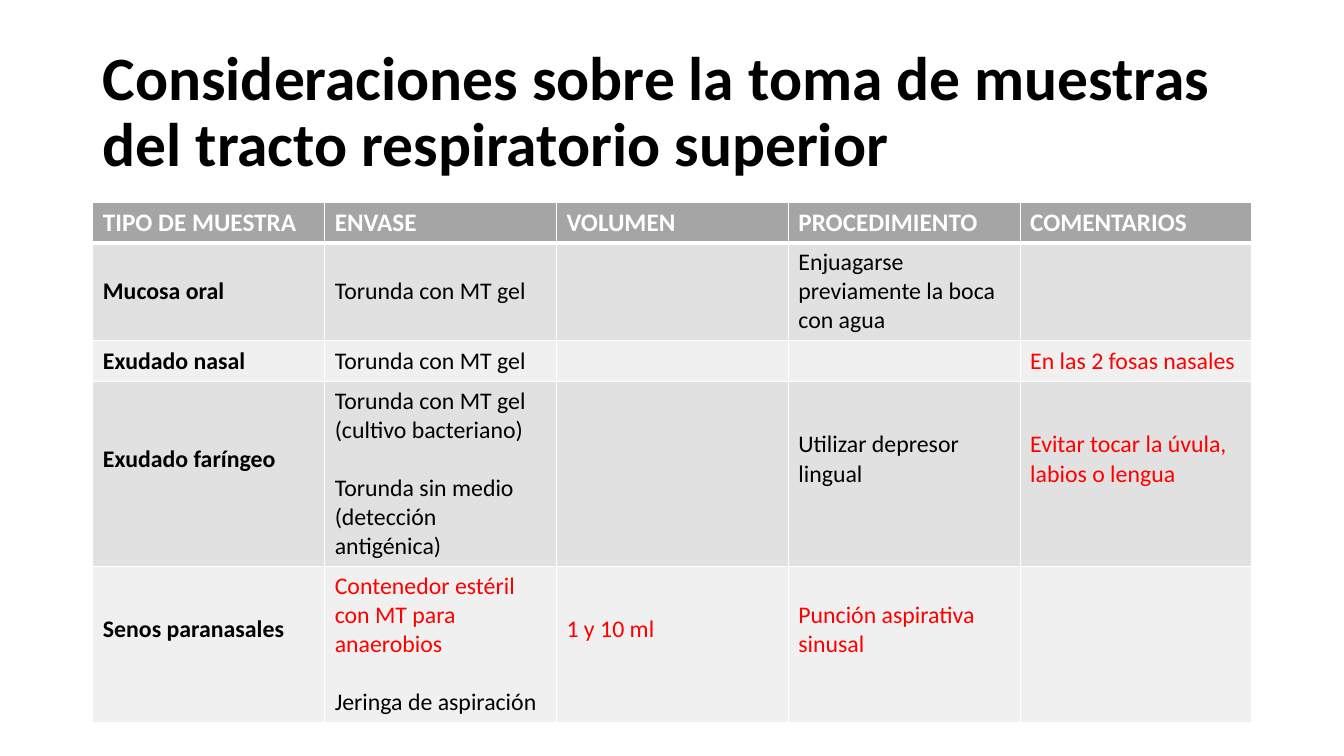
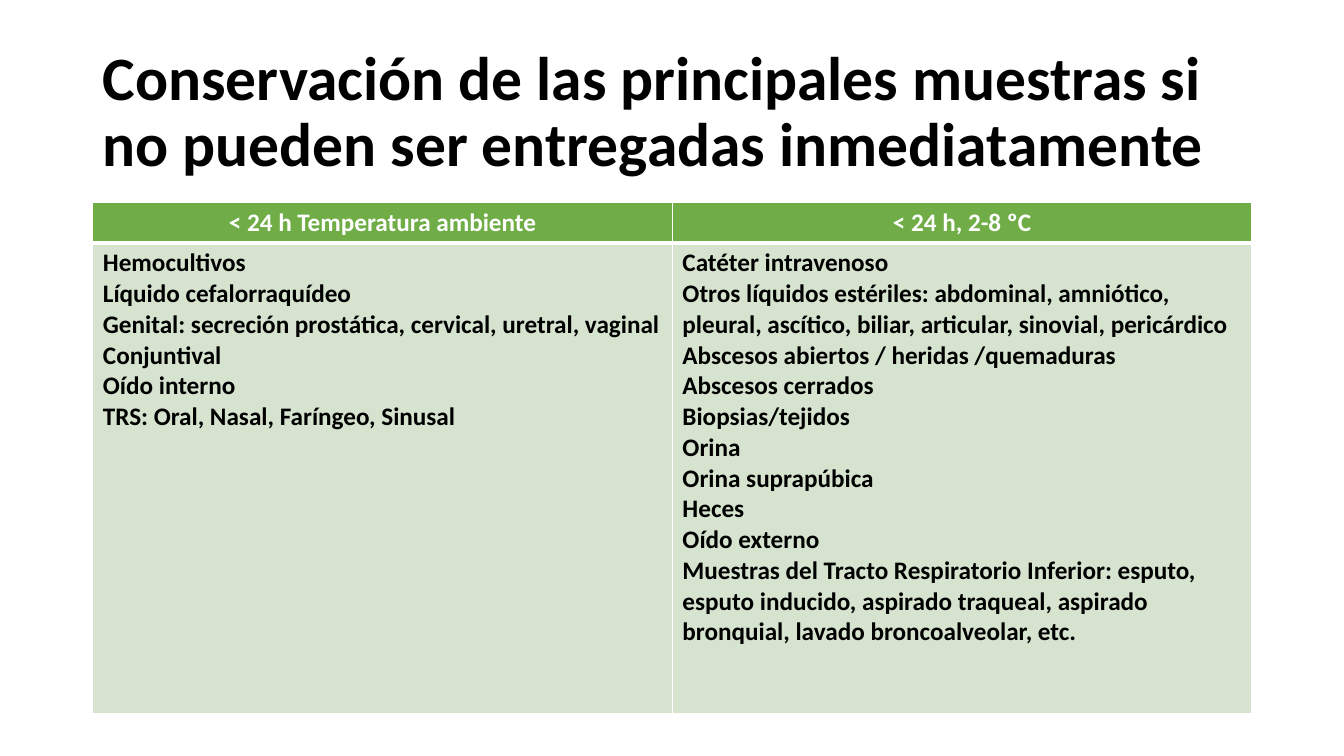
from typing import NamedTuple

from lxml.etree import SubElement
from pptx import Presentation
from pptx.dml.color import RGBColor
from pptx.enum.text import MSO_ANCHOR as Anchor, PP_ALIGN as Align
from pptx.oxml.ns import qn
from pptx.util import Cm, Pt

COLORS = {
    "white": "FFFFFF", "black": "000000", "red": "FF0000",
    "gray": "A5A5A5", "gray_dark_band": "E1E1E1", "gray_light_band": "F0F0F0",
    "green": "70AD47", "green_band": "D5E3CF",
}
FONT = "Calibri"
LEFT, WIDTH = Cm(2.34), Cm(29.21)
TITLE_TOP, TITLE_HEIGHT = Cm(1.02), Cm(3.68)
TABLE_TOP, HEADER_HEIGHT = Cm(5.09), 1.03
BLANK_LINE = 1.22  # line height relative to the font size


class Line(NamedTuple):
    text: str
    color: str = "black"
    bold: bool = False


def red(text):
    return Line(text, "red")


def bold(text):
    return Line(text, bold=True)


SAMPLE_HEADS = ["TIPO DE MUESTRA", "ENVASE", "VOLUMEN", "PROCEDIMIENTO", "COMENTARIOS"]
SAMPLE_ROWS = [
    [[bold("Mucosa oral")], [Line("Torunda con MT gel")], [],
     [Line("Enjuagarse previamente la boca con agua")], []],
    [[bold("Exudado nasal")], [Line("Torunda con MT gel")], [], [],
     [red("En las 2 fosas nasales")]],
    [[bold("Exudado faríngeo")],
     [Line("Torunda con MT gel (cultivo bacteriano)"),
      Line("Torunda sin medio (detección antigénica)")],
     [], [Line("Utilizar depresor lingual")],
     [red("Evitar tocar la úvula, labios o lengua")]],
    [[bold("Senos paranasales")],
     [red("Contenedor estéril con MT para anaerobios"), Line("Jeringa de aspiración")],
     [red("1 y 10 ml")], [red("Punción aspirativa sinusal")], []],
]
SAMPLE_HEIGHTS = [2.46, 1.03, 4.66, 3.93]

STORAGE_HEADS = ["< 24 h Temperatura ambiente", "< 24 h, 2-8 ºC"]
ROOM_TEMPERATURE = [
    "Hemocultivos",
    "Líquido cefalorraquídeo",
    "Genital: secreción prostática, cervical, uretral, vaginal",
    "Conjuntival",
    "Oído interno",
    "TRS: Oral, Nasal, Faríngeo, Sinusal",
]
REFRIGERATED = [
    "Catéter intravenoso",
    "Otros líquidos estériles: abdominal, amniótico, pleural, ascítico, biliar, "
    "articular, sinovial, pericárdico",
    "Abscesos abiertos / heridas /quemaduras",
    "Abscesos cerrados",
    "Biopsias/tejidos",
    "Orina",
    "Orina suprapúbica",
    "Heces",
    "Oído externo",
    "Muestras del Tracto Respiratorio Inferior: esputo, esputo inducido, aspirado "
    "traqueal, aspirado bronquial, lavado broncoalveolar, etc.",
]
STORAGE_HEIGHT = 11.86


def rgb(name):
    return RGBColor.from_string(COLORS[name])


def add_run(p, line, size):
    r = p.add_run()
    r.text = line.text
    r.font.name, r.font.size, r.font.bold = FONT, Pt(size), line.bold
    r.font.color.rgb = rgb(line.color)


def add_title(s, text):
    tf = s.shapes.add_textbox(LEFT, TITLE_TOP, WIDTH, TITLE_HEIGHT).text_frame
    tf.word_wrap = True
    tf.vertical_anchor = Anchor.MIDDLE
    p = tf.paragraphs[0]
    p.line_spacing = 0.9
    add_run(p, bold(text), 44)


def set_borders(cell, top, bottom):
    """Draw white borders; side lines are 1 pt wide."""
    tc_pr = cell._tc.get_or_add_tcPr()
    for side, width in (("L", 1), ("R", 1), ("T", top), ("B", bottom)):
        ln = SubElement(tc_pr, qn(f"a:ln{side}"), w=str(Pt(width)))
        fill = SubElement(ln, qn("a:solidFill"))
        SubElement(fill, qn("a:srgbClr"), val=COLORS["white"])


def fill_cell(cell, lines, size, fill, align=Align.LEFT, gap=0):
    cell.fill.solid()
    cell.fill.fore_color.rgb = rgb(fill)
    tf = cell.text_frame
    for i, line in enumerate(lines):
        p = tf.add_paragraph() if i else tf.paragraphs[0]
        p.alignment = align
        if i and gap:
            p.space_before = Pt(gap)
        add_run(p, line, size)


def add_table(s, heads, head_fill, heights, head_align=Align.LEFT):
    """Add a table with its header row and borders; heights are in cm."""
    heights = [HEADER_HEIGHT, *heights]
    table = s.shapes.add_table(len(heights), len(heads), LEFT, TABLE_TOP,
                               WIDTH, Cm(sum(heights))).table
    for row, height in zip(table.rows, heights):
        row.height = Cm(height)
    for i, row in enumerate(table.rows):
        for cell in row.cells:
            set_borders(cell, top=3 if i == 1 else 1, bottom=3 if i == 0 else 1)
    for cell, head in zip(table.rows[0].cells, heads):
        fill_cell(cell, [Line(head, "white", True)], 18, head_fill, head_align)
    return table


def add_sample_table(s):
    size = 17
    gap = size * BLANK_LINE
    table = add_table(s, SAMPLE_HEADS, "gray", SAMPLE_HEIGHTS)
    for i, texts in enumerate(SAMPLE_ROWS):
        fill = "gray_light_band" if i % 2 else "gray_dark_band"
        has_gap = any(len(lines) > 1 for lines in texts)
        for cell, lines in zip(table.rows[i + 1].cells, texts):
            cell.vertical_anchor = Anchor.MIDDLE
            if has_gap and len(lines) == 1:
                cell.margin_bottom += Pt(gap)
            fill_cell(cell, lines, size, fill, gap=gap)


def add_storage_table(s):
    table = add_table(s, STORAGE_HEADS, "green", [STORAGE_HEIGHT], Align.CENTER)
    for cell, samples in zip(table.rows[1].cells, (ROOM_TEMPERATURE, REFRIGERATED)):
        fill_cell(cell, [bold(sample) for sample in samples], 18, "green_band")


def main():
    prs = Presentation()
    prs.slide_width, prs.slide_height = Cm(33.87), Cm(19.05)
    slides = [
        ("Consideraciones sobre la toma de muestras del tracto respiratorio superior",
         add_sample_table),
        ("Conservación de las principales muestras si no pueden ser entregadas "
         "inmediatamente", add_storage_table),
    ]
    for title, add_content in slides:
        s = prs.slides.add_slide(prs.slide_layouts[6])
        add_title(s, title)
        add_content(s)
    prs.save("out.pptx")


if __name__ == "__main__":
    main()
